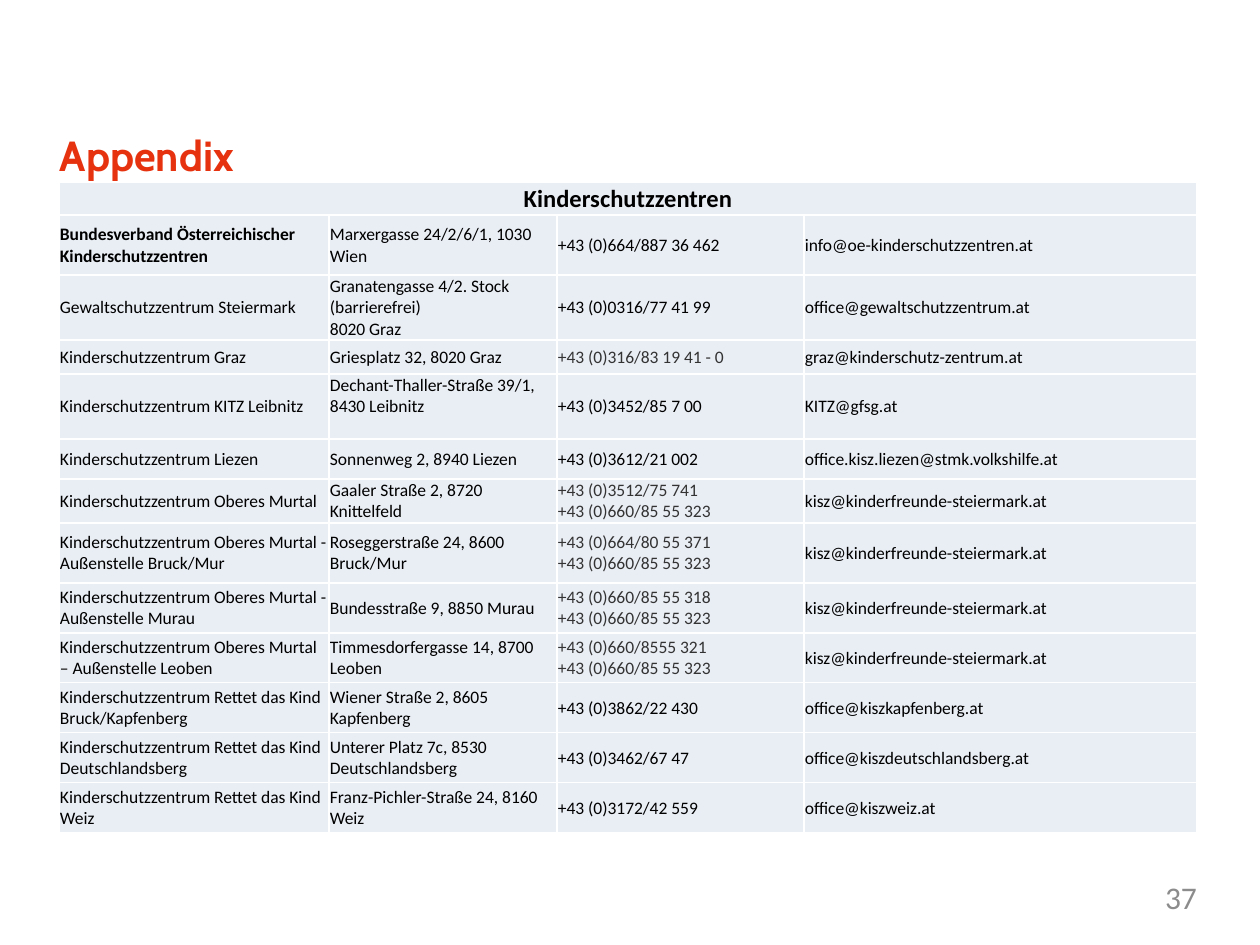
from lxml.etree import SubElement
from pptx import Presentation
from pptx.dml.color import RGBColor
from pptx.enum.text import MSO_ANCHOR, PP_ALIGN
from pptx.oxml.ns import qn
from pptx.util import Pt

PX = 914400 // 126
BLACK, GREY, RED, WHITE, PALE = "000000", "333333", "E6320F", "FFFFFF", "E9EDF4"
MURTAL = "Kinderschutzzentrum Oberes Murtal"
RETTET = "Kinderschutzzentrum Rettet das Kind"
KISZ = "kisz@kinderfreunde-steiermark.at"
MOBILE = "+43 (0)660/85 55 323"

HEADING = "Kinderschutzzentren"
HEAD_H = 33
COLS = [270, 228, 247, 393]

# row height, phone colour, (name, address, phone, mail)
CENTRES = [
    (60, BLACK, ("Bundesverband Österreichischer Kinderschutzzentren",
                 "Marxergasse 24/2/6/1, 1030 Wien",
                 "+43 (0)664/887 36 462", "info@oe-kinderschutzzentren.at")),
    (65, BLACK, ("Gewaltschutzzentrum Steiermark",
                 "Granatengasse 4/2. Stock (barrierefrei)\n8020 Graz",
                 "+43 (0)0316/77 41 99", "office@gewaltschutzzentrum.at")),
    (34, GREY, ("Kinderschutzzentrum Graz", "Griesplatz 32, 8020 Graz",
                "+43 (0)316/83 19 41 - 0", "graz@kinderschutz-zentrum.at")),
    (65, BLACK, ("Kinderschutzzentrum KITZ Leibnitz",
                 "Dechant-Thaller-Straße 39/1, 8430 Leibnitz",
                 "+43 (0)3452/85 7 00", "KITZ@gfsg.at")),
    (40, BLACK, ("Kinderschutzzentrum Liezen", "Sonnenweg 2, 8940 Liezen",
                 "+43 (0)3612/21 002", "office.kisz.liezen@stmk.volkshilfe.at")),
    (44, GREY, (MURTAL, "Gaaler Straße 2, 8720 Knittelfeld",
                f"+43 (0)3512/75 741\n{MOBILE}", KISZ)),
    (60, GREY, (f"{MURTAL} - Außenstelle Bruck/Mur",
                "Roseggerstraße 24, 8600 Bruck/Mur",
                f"+43 (0)664/80 55 371\n{MOBILE}", KISZ)),
    (50, GREY, (f"{MURTAL} - Außenstelle Murau", "Bundesstraße 9, 8850 Murau",
                f"+43 (0)660/85 55 318\n{MOBILE}", KISZ)),
    (50, GREY, (f"{MURTAL} – Außenstelle Leoben",
                "Timmesdorfergasse 14, 8700 Leoben",
                f"+43 (0)660/8555 321\n{MOBILE}", KISZ)),
    (50, BLACK, (f"{RETTET} Bruck/Kapfenberg", "Wiener Straße 2, 8605 Kapfenberg",
                 "+43 (0)3862/22 430", "office@kiszkapfenberg.at")),
    (50, BLACK, (f"{RETTET} Deutschlandsberg",
                 "Unterer Platz 7c, 8530 Deutschlandsberg",
                 "+43 (0)3462/67 47", "office@kiszdeutschlandsberg.at")),
    (50, BLACK, (f"{RETTET} Weiz", "Franz-Pichler-Straße 24, 8160 Weiz",
                 "+43 (0)3172/42 559", "office@kiszweiz.at")),
]
TOP_CELL = (4, 1)  # the Leibnitz address sits at the top of its cell


def rgb(code):
    return RGBColor.from_string(code)


def write(frame, text, size=10, color=BLACK, bold=False, font="Calibri",
          align=PP_ALIGN.LEFT):
    frame.word_wrap = True
    frame.text = text
    for para in frame.paragraphs:
        para.alignment = align
        para.font.size, para.font.name, para.font.bold = Pt(size), font, bold
        para.font.color.rgb = rgb(color)


def label(slide, box, text, **style):
    frame = slide.shapes.add_textbox(*(n * PX for n in box)).text_frame
    frame.margin_left = frame.margin_right = 0
    frame.margin_top = frame.margin_bottom = 0
    write(frame, text, **style)


def dress(cell):
    """Give a cell its white borders, pale fill and narrow margins."""
    props = cell._tc.get_or_add_tcPr()
    for side in ("lnL", "lnR", "lnT", "lnB"):
        line = SubElement(props, qn(f"a:{side}"), w=str(Pt(1)))
        SubElement(SubElement(line, qn("a:solidFill")), qn("a:srgbClr"), val=WHITE)
    cell.fill.solid()
    cell.fill.fore_color.rgb = rgb(PALE)
    cell.margin_left = cell.margin_right = cell.margin_top = PX
    cell.margin_bottom = 0
    cell.vertical_anchor = MSO_ANCHOR.MIDDLE


def add_list(slide, left, top):
    heights = [HEAD_H] + [row[0] for row in CENTRES]
    table = slide.shapes.add_table(
        len(heights), len(COLS), left * PX, top * PX,
        sum(COLS) * PX, sum(heights) * PX).table
    for col, width in zip(table.columns, COLS):
        col.width = width * PX
    for row, height in zip(table.rows, heights):
        row.height = height * PX
    for cell in table.iter_cells():
        dress(cell)

    head = table.cell(0, 0)
    head.merge(table.cell(0, len(COLS) - 1))
    write(head.text_frame, HEADING, size=14, bold=True, align=PP_ALIGN.CENTER)
    for r, (_, tint, texts) in enumerate(CENTRES, 1):
        for c, text in enumerate(texts):
            write(table.cell(r, c).text_frame, text, bold=(r, c) == (1, 0),
                  color=tint if c == 2 else BLACK)
    table.cell(*TOP_CELL).vertical_anchor = MSO_ANCHOR.TOP


def main():
    deck = Presentation()
    deck.slide_width, deck.slide_height = 1260 * PX, 945 * PX
    slide = deck.slides.add_slide(deck.slide_layouts[6])
    label(slide, (60, 130, 1138, 50), "Appendix", size=24, color=RED,
          bold=True, font="Cabin")
    add_list(slide, 59, 182)
    label(slide, (907, 878, 290, 48), "37", size=18, color="8C8C8C",
          align=PP_ALIGN.RIGHT)
    deck.save("out.pptx")


if __name__ == "__main__":
    main()
